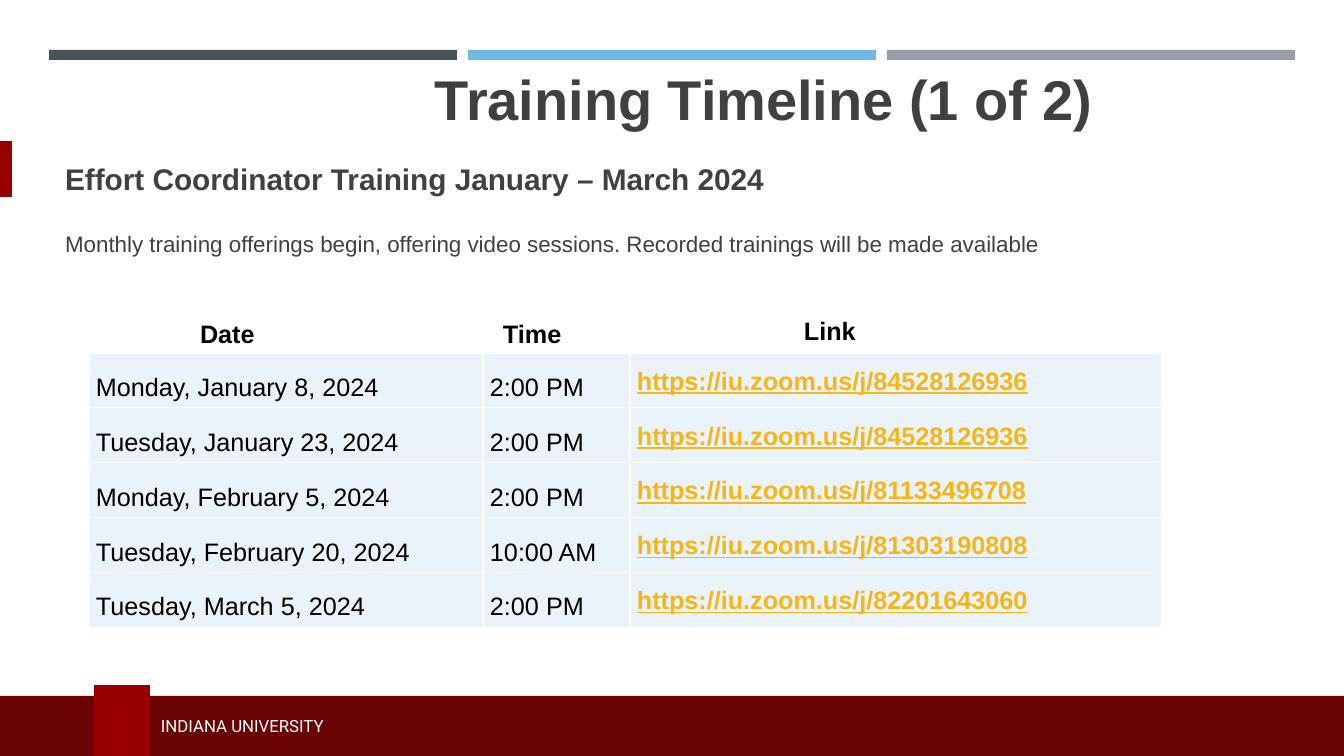
import pptx
import pptx.util
import pptx.dml.color
import pptx.enum.shapes
import pptx.enum.text
import pptx.oxml
import pptx.oxml.ns

RGB = pptx.dml.color.RGBColor
ANCHOR = pptx.enum.text.MSO_ANCHOR
ALIGN = pptx.enum.text.PP_ALIGN
Pt = pptx.util.Pt

SLATE = RGB(0x46, 0x53, 0x59)
SKY = RGB(0x71, 0xB9, 0xE4)
GRAY = RGB(0x96, 0x9F, 0xA7)
CRIMSON = RGB(0x99, 0x00, 0x00)
MAROON = RGB(0x69, 0x03, 0x04)
WHITE = RGB(0xFF, 0xFF, 0xFF)
BLACK = RGB(0x00, 0x00, 0x00)
CHARCOAL = RGB(0x40, 0x40, 0x41)
GOLD = RGB(0xF7, 0xB6, 0x15)
ICE = RGB(0xEB, 0xF3, 0xFA)

SLIDE_WIDTH, SLIDE_HEIGHT = 1344, 756
EMU_PER_PX = 12192000 / SLIDE_WIDTH

COLUMN_WIDTHS = (394, 147, 532)
ROW_HEIGHT = 55
HEADINGS = (("Date", 111, 15, 1.5), ("Time", 20, 15, 1.5), ("Link", 174, 24, 1.07))
SESSIONS = (
    ("Monday, January 8, 2024", "2:00 PM", "https://iu.zoom.us/j/84528126936"),
    ("Tuesday, January 23, 2024", "2:00 PM", "https://iu.zoom.us/j/84528126936"),
    ("Monday, February 5, 2024", "2:00 PM", "https://iu.zoom.us/j/81133496708"),
    ("Tuesday, February 20, 2024", "10:00 AM", "https://iu.zoom.us/j/81303190808"),
    ("Tuesday, March 5, 2024", "2:00 PM", "https://iu.zoom.us/j/82201643060"),
)


def px(length):
    return pptx.util.Emu(round(length * EMU_PER_PX))


def set_font(paragraph, size, color, bold=False, name="Arial"):
    font = paragraph.font
    font.name, font.size, font.bold = name, Pt(size), bold
    font.color.rgb = color


def add_block(slide, left, top, width, height, color):
    block = slide.shapes.add_shape(
        pptx.enum.shapes.MSO_SHAPE.RECTANGLE, px(left), px(top), px(width), px(height))
    block.shadow.inherit = False
    block.fill.solid()
    block.fill.fore_color.rgb = color
    block.line.fill.background()


def add_top_bars(slide, left, top, width, height, gap):
    for index, color in enumerate((SLATE, SKY, GRAY)):
        add_block(slide, left + index * (width + gap), top, width, height, color)


def add_footer(slide, left, top, width, height):
    add_block(slide, left, top, width, height, MAROON)
    add_block(slide, left + 94, top - 11, 56, height + 11, CRIMSON)
    university = slide.shapes.add_textbox(px(left + 151), px(top + 15), px(531), px(30))
    frame = university.text_frame
    frame.word_wrap = True
    frame.vertical_anchor = ANCHOR.MIDDLE
    frame.text = "INDIANA UNIVERSITY"
    set_font(frame.paragraphs[0], 12, WHITE, name="Roboto")


def fill_placeholder(placeholder, box, text, size, bold, anchor, align):
    placeholder.left, placeholder.top, placeholder.width, placeholder.height = map(px, box)
    frame = placeholder.text_frame
    frame.word_wrap = True
    frame.auto_size = pptx.enum.text.MSO_AUTO_SIZE.NONE
    frame.vertical_anchor = anchor
    frame.text = text
    paragraph = frame.paragraphs[0]
    paragraph.alignment = align
    paragraph.space_before = Pt(0)
    set_font(paragraph, size, CHARCOAL, bold)


def set_borders(cell, bottom=1):
    properties = cell._tc.get_or_add_tcPr()
    edges = (("lnL", 1), ("lnR", 1), ("lnT", 1), ("lnB", bottom))
    for position, (edge, width) in enumerate(edges):
        properties.insert(position, pptx.oxml.parse_xml(
            f'<a:{edge} {pptx.oxml.ns.nsdecls("a")} w="{Pt(width)}"><a:solidFill>'
            f'<a:srgbClr val="{WHITE}"/></a:solidFill></a:{edge}>'))


def fill_cell(cell, text, left, top, spacing, anchor, color, bold):
    cell.margin_left, cell.margin_top = px(left), px(top)
    cell.margin_right, cell.margin_bottom = px(7), 0
    cell.vertical_anchor = anchor
    cell.text = text
    paragraph = cell.text_frame.paragraphs[0]
    paragraph.line_spacing = spacing
    set_font(paragraph, 18, color, bold)
    return paragraph


def add_schedule(slide, left, top):
    row_count = len(SESSIONS) + 1
    schedule = slide.shapes.add_table(
        row_count, len(COLUMN_WIDTHS), px(left), px(top),
        px(sum(COLUMN_WIDTHS)), px(ROW_HEIGHT * row_count)).table
    schedule.first_row = schedule.horz_banding = False
    for column, width in zip(schedule.columns, COLUMN_WIDTHS):
        column.width = px(width)
    for row in schedule.rows:
        row.height = px(ROW_HEIGHT)

    # Headings
    for index, (heading, inset, drop, spacing) in enumerate(HEADINGS):
        cell = schedule.cell(0, index)
        fill_cell(cell, heading, inset, drop, spacing, ANCHOR.TOP, BLACK, True)
        cell.fill.background()
        set_borders(cell, bottom=3)

    # Sessions
    for row_index, session in enumerate(SESSIONS, 1):
        for index, text in enumerate(session):
            is_link = index == 2
            cell = schedule.cell(row_index, index)
            paragraph = fill_cell(cell, text, 7, 1, 1.07 if is_link else 1.5,
                                  ANCHOR.MIDDLE, GOLD if is_link else BLACK, is_link)
            if is_link:
                paragraph.space_after = Pt(8)
                paragraph.font.underline = True
            cell.fill.solid()
            cell.fill.fore_color.rgb = ICE
            set_borders(cell)


def build_timeline_slide(presentation):
    slide = presentation.slides.add_slide(presentation.slide_layouts.get_by_name("Comparison"))
    title, heading, left_content, summary, right_content = slide.placeholders
    for unused in (left_content, right_content):
        unused.element.getparent().remove(unused.element)

    # Decoration and footer
    add_top_bars(slide, 49, 50, 408, 10, 11)
    add_block(slide, 0, 141, 12, 56, CRIMSON)
    add_footer(slide, 0, 696, SLIDE_WIDTH, SLIDE_HEIGHT - 696)

    # Title and introduction
    fill_placeholder(title, (414, 53, 700, 83), "Training Timeline (1 of 2)",
                     40, True, ANCHOR.BOTTOM, ALIGN.CENTER)
    title.text_frame.margin_bottom = px(4)
    fill_placeholder(heading, (55, 153, 738, 52),
                     "Effort Coordinator Training January – March 2024",
                     21.3, True, ANCHOR.MIDDLE, ALIGN.LEFT)
    fill_placeholder(summary, (55, 214, 1021, 60),
                     "Monthly training offerings begin, offering video sessions. "
                     "Recorded trainings will be made available",
                     16, False, ANCHOR.MIDDLE, ALIGN.LEFT)

    # Training dates
    add_schedule(slide, 89, 292)


def main():
    presentation = pptx.Presentation()
    presentation.slide_width, presentation.slide_height = px(SLIDE_WIDTH), px(SLIDE_HEIGHT)
    build_timeline_slide(presentation)
    presentation.save("out.pptx")


if __name__ == "__main__":
    main()
